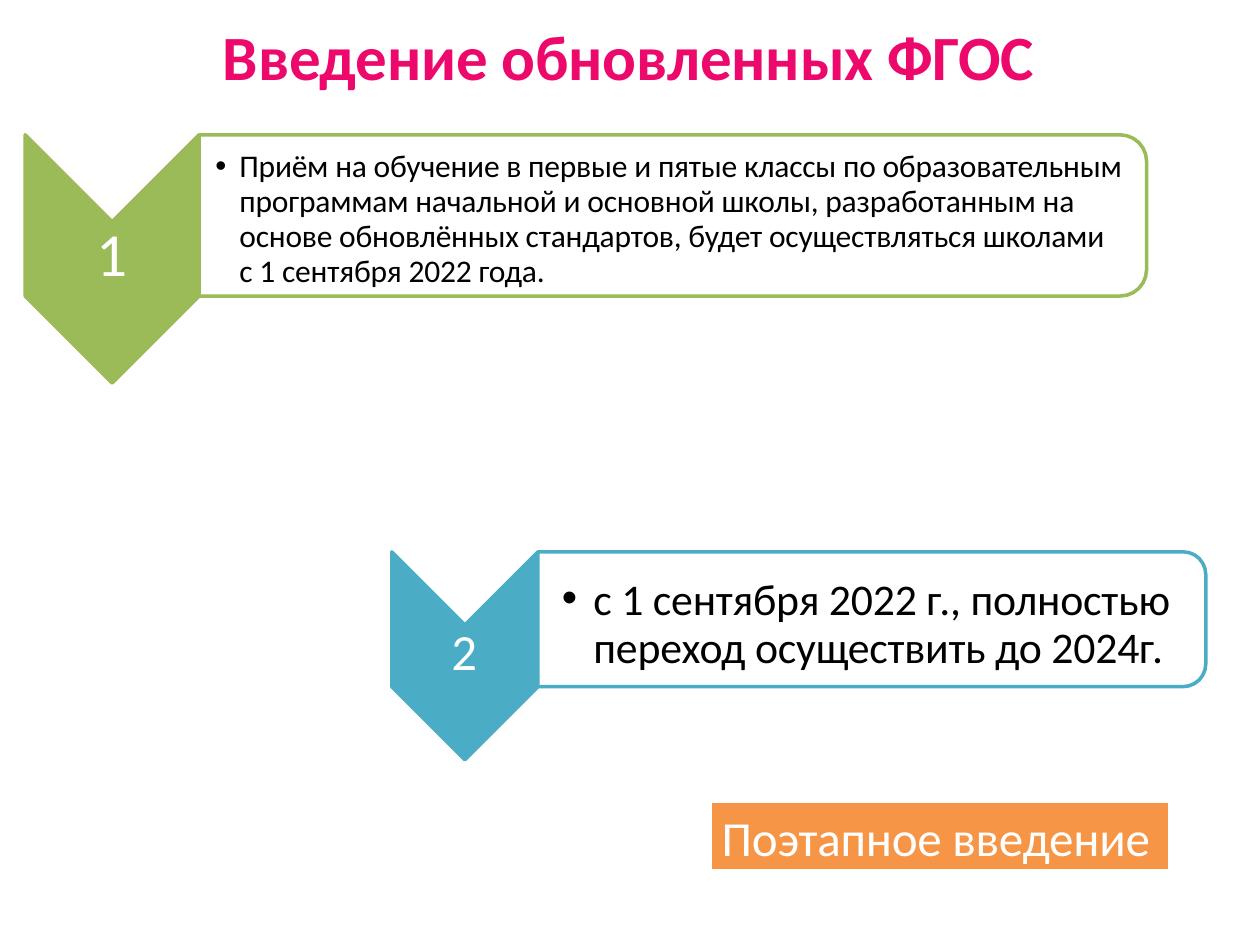
import math
from dataclasses import dataclass

import pptx
import pptx.util
import pptx.dml.color
import pptx.enum.shapes
import pptx.enum.text
import pptx.oxml
import pptx.oxml.ns
from pptx.util import Inches


@dataclass(frozen=True)
class Theme:
    font: str = "Calibri"
    title: str = "ED086B"
    first: str = "9BBA58"
    second: str = "4AACC5"
    label: str = "F79546"
    text: str = "000000"
    white: str = "FFFFFF"
    title_size: int = 36
    label_size: int = 28
    number_sizes: tuple = (35, 29)
    list_sizes: tuple = (18, 25)


THEME = Theme()


def rgb(value):
    return pptx.dml.color.RGBColor.from_string(value)


def write_text(shape, text, *, size, color, bold=False, align="LEFT", left=0, top=0,
               spacing=None, bullet_indent=None, tracking=-0.1):
    """Put one formatted paragraph into a shape."""
    frame = shape.text_frame
    frame.word_wrap = True
    frame.auto_size = pptx.enum.text.MSO_AUTO_SIZE.NONE
    frame.vertical_anchor = pptx.enum.text.MSO_ANCHOR.TOP
    frame.margin_left, frame.margin_top = Inches(left), Inches(top)
    frame.margin_right = frame.margin_bottom = 0
    paragraph = frame.paragraphs[0]
    paragraph.text = text
    paragraph.alignment = getattr(pptx.enum.text.PP_ALIGN, align)
    paragraph.space_before = pptx.util.Pt(0)
    if spacing:
        paragraph.line_spacing = spacing
    if bullet_indent:
        properties = paragraph._p.get_or_add_pPr()
        properties.set("marL", str(Inches(bullet_indent)))
        properties.set("indent", str(-Inches(bullet_indent - 0.01)))
        bullet = pptx.oxml.parse_xml(
            f'<a:buChar {pptx.oxml.ns.nsdecls("a")} char="•"/>')
        properties.append(bullet)
    for run in paragraph.runs:
        run.font.name = THEME.font
        run.font.size = pptx.util.Pt(size)
        run.font.bold = bold
        run.font.color.rgb = rgb(color)
        run._r.get_or_add_rPr().set("spc", str(round(tracking * 100)))


class SlideBuilder:
    def __init__(self, slide):
        self.slide = slide
        self.shapes = slide.shapes

    def paint(self, shape, fill, line, width):
        shape.shadow.inherit = False
        shape.fill.solid()
        shape.fill.fore_color.rgb = rgb(fill)
        shape.line.color.rgb = rgb(line)
        shape.line.width = pptx.util.Pt(width)

    def placeholder(self, index, box, text, **style):
        holder = self.slide.placeholders[index]
        holder.left, holder.top, holder.width, holder.height = map(Inches, box)
        # Bring the text in front of the panels drawn so far
        self.shapes._spTree.append(holder._element)
        write_text(holder, text, **style)

    def outline(self, points, fill, line):
        corners = [(Inches(x), Inches(y)) for x, y in points]
        builder = self.shapes.build_freeform(*corners[0])
        builder.add_line_segments(corners[1:], close=True)
        self.paint(builder.convert_to_shape(), fill, line, 2)

    def chevron(self, left, top, width, side, color):
        middle, right, point = left + width / 2, left + width, width / 2
        self.outline([(left, top), (middle, top + point), (right, top),
                      (right, top + side), (middle, top + side + point),
                      (left, top + side)], color, color)

    def panel(self, left, top, right, height, radius, color):
        """A box whose two right corners are rounded."""
        bottom = top + height
        angles = [math.radians(step * 15) for step in range(7)]
        upper = [(right - radius + radius * math.sin(a),
                  top + radius - radius * math.cos(a)) for a in angles]
        lower = [(x, top + bottom - y) for x, y in reversed(upper)]
        self.outline([(left, top), *upper, *lower, (left, bottom)],
                     THEME.white, color)

    def number(self, box, text, size):
        write_text(self.shapes.add_textbox(*map(Inches, box)), text, size=size,
                   color=THEME.white, align="CENTER", top=0.02, tracking=0)

    def label(self, box, text):
        shape = self.shapes.add_shape(
            pptx.enum.shapes.MSO_SHAPE.RECTANGLE, *map(Inches, box))
        self.paint(shape, THEME.label, THEME.white, 3)
        write_text(shape, text, size=THEME.label_size, color=THEME.white,
                   left=0.1, top=0.06)

    def stage(self, index, *, left, top, width, side, right, radius, color,
              number_box, list_box, text, inset, **list_style):
        self.chevron(left, top, width, side, color)
        self.number(number_box, str(index), THEME.number_sizes[index - 1])
        self.panel(left + width, top, right, side, radius, color)
        self.placeholder(index, list_box, text, color=THEME.text, top=inset,
                         size=THEME.list_sizes[index - 1], **list_style)


def main():
    deck = pptx.Presentation()
    deck.slide_width, deck.slide_height = Inches(10), Inches(7.5)
    page = SlideBuilder(deck.slides.add_slide(deck.slide_layouts[3]))

    # Title
    page.placeholder(0, (1.76, 0.12, 6.5, 0.63), "Введение обновленных ФГОС",
                     size=THEME.title_size, color=THEME.title, bold=True,
                     left=0.01, top=0.02)

    # First stage: admission under the new standards
    page.stage(
        1, left=0.2, top=1.07, width=1.38, side=1.28, right=9.1, radius=0.21,
        color=THEME.first, number_box=(0.75, 1.69, 0.28, 0.6),
        list_box=(1.7, 1.11, 7.32, 1.15),
        text="Приём на обучение в первые и пятые классы по образовательным "
             "программам начальной и основной школы, разработанным на "
             "основе обновлённых стандартов, будет осуществляться школами\v"
             "с 1 сентября 2022 года.",
        inset=0.08, spacing=0.92, bullet_indent=0.2)

    # Closing label
    page.label((5.63, 6.35, 3.66, 0.57), "Поэтапное введение")

    # Second stage: full transition
    page.stage(
        2, left=3.11, top=4.38, width=1.16, side=1.07, right=9.57, radius=0.18,
        color=THEME.second, number_box=(3.57, 4.9, 0.23, 0.5),
        list_box=(4.45, 4.46, 4.91, 0.83),
        text="с 1 сентября 2022 г., полностью переход осуществить до 2024г.",
        inset=0.11, spacing=pptx.util.Pt(27.5), bullet_indent=0.26)

    deck.save("out.pptx")


if __name__ == "__main__":
    main()
